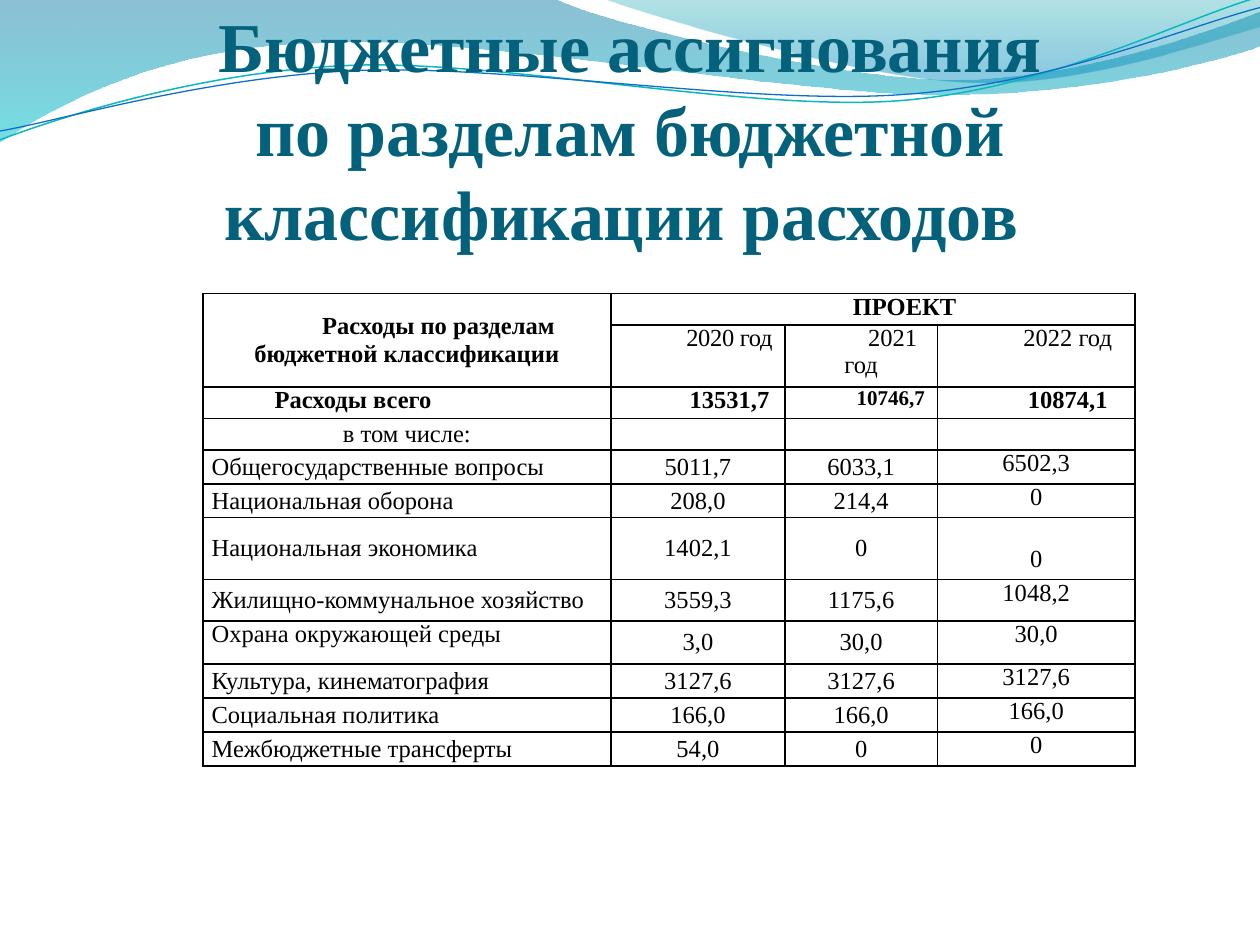
from dataclasses import dataclass
from math import cos, radians, sin
from typing import Optional

from lxml import etree
from pptx import Presentation
from pptx.dml.color import RGBColor
from pptx.enum.text import MSO_ANCHOR, MSO_AUTO_SIZE, PP_ALIGN
from pptx.oxml.ns import qn
from pptx.util import Inches, Pt

LEFT, CENTER = PP_ALIGN.LEFT, PP_ALIGN.CENTER
TOP, MIDDLE, BOTTOM = MSO_ANCHOR.TOP, MSO_ANCHOR.MIDDLE, MSO_ANCHOR.BOTTOM
NO_AUTOFIT = MSO_AUTO_SIZE.NONE


@dataclass(frozen=True)
class Theme:
    font: str = "Times New Roman"
    title_color: str = "04617B"
    ink: str = "000000"
    title_size: float = 40
    table_size: float = 14
    small_size: float = 12
    border_width: float = 1


@dataclass(frozen=True)
class GradientStop:
    color: str
    position: float
    opacity: int


@dataclass(frozen=True)
class Wave:
    bounds: tuple
    start: tuple
    segments: tuple
    stops: tuple = ()
    line_color: str = ""
    line_width: float = 0
    rotation: float = 0


@dataclass(frozen=True)
class CellText:
    text: str
    align: Optional[PP_ALIGN] = CENTER
    anchor: MSO_ANCHOR = TOP
    bold: bool = False
    indent: float = 0
    size: float = Theme.table_size
    spacing: int = 0
    top: float = 0


THEME = Theme()
WAVES = (
    Wave((-0.01, -0.01, 10.02, 1.14), (0, 0),
         ((4.4, -0.01), (4.76, 0.17, 6.64, 0.63, 7.58, 0.63),
          (8.53, 0.63, 9.58, 0.26, 10, 0.09), (10.01, 0.36),
          (9.83, 0.44, 8.7, 0.76, 7.46, 0.75), (6.22, 0.75, 3.82, 0.28, 2.57, 0.34),
          (1.29, 0.36, 0.46, 0.83, -0.01, 1.13), (0, 0)),
         stops=(GradientStop("0074A1", 0, 45), GradientStop("00C6CF", 1, 55))),
    Wave((4.79, -0.01, 5.21, 0.7), (4.79, -0.01),
         ((5.09, 0.11, 6.82, 0.62, 7.69, 0.65), (8.56, 0.69, 9.61, 0.32, 10, 0.21),
          (10, 0), (4.79, -0.01)),
         stops=(GradientStop("00A1A9", 0, 30), GradientStop("008BBF", 0.8, 45))),
    Wave((-0.02, 0.22, 10.02, 0.71), (0, 1.11),
         ((0.48, 0.93, 1.58, 0.57, 2.77, 0.52), (3.95, 0.47, 5.93, 0.89, 7.13, 0.8),
          (8.33, 0.71, 9.38, 0.15, 9.98, -0.02)),
         line_color="0AB8BF", line_width=0.85, rotation=357.3),
    Wave((-0.02, 0.3, 10.03, 0.58), (0, 1.04),
         ((0.47, 0.96, 1.64, 0.61, 2.83, 0.56), (4.03, 0.51, 5.97, 0.84, 7.17, 0.75),
          (8.36, 0.67, 9.41, 0.21, 10, 0.06)),
         line_color="0F6FC6", line_width=0.75, rotation=357.3),
)
COLUMN_WIDTHS = (3.24, 1.38, 1.21, 1.57)
ROW_HEIGHTS = (0.25, 0.49, 0.25, 0.25, 0.27, 0.27, 0.49, 0.33, 0.34, 0.27, 0.27, 0.27)
HEADER = {
    (0, 0): CellText("Расходы по разделам бюджетной классификации", anchor=MIDDLE,
                     bold=True, indent=0.5),
    (0, 1): CellText("ПРОЕКТ", bold=True, indent=0.5),
    (1, 1): CellText("2020 год", indent=0.5, spacing=-20),
    (1, 2): CellText("2021 год", indent=0.5),
    (1, 3): CellText("2022 год", indent=0.5),
    (2, 0): CellText("Расходы всего", align=LEFT, bold=True, indent=0.5),
    (2, 1): CellText("13531,7", bold=True, indent=0.5),
    (2, 2): CellText("10746,7", align=LEFT, bold=True, indent=0.5, size=THEME.small_size),
    (2, 3): CellText("10874,1", bold=True, indent=0.5),
    (3, 0): CellText("в том числе:", anchor=MIDDLE),
}
EXPENSES = (
    ("Общегосударственные вопросы", "5011,7", "6033,1", "6502,3"),
    ("Национальная оборона", "208,0", "214,4", "0"),
    ("Национальная экономика", "1402,1", "0", "0"),
    ("Жилищно-коммунальное хозяйство", "3559,3", "1175,6", "1048,2"),
    ("Охрана окружающей среды", "3,0", "30,0", "30,0"),
    ("Культура, кинематография", "3127,6", "3127,6", "3127,6"),
    ("Социальная политика", "166,0", "166,0", "166,0"),
    ("Межбюджетные трансферты", "54,0", "0", "0"),
)
FIRST_EXPENSE_ROW = 4


def write_text(frame, text: str, *, size: float, color: str, bold: bool = False,
               align: PP_ALIGN = CENTER, indent: float = 0, spacing: int = 0) -> None:
    para = frame.paragraphs[0]
    para.alignment = align
    if indent:
        properties = para._p.get_or_add_pPr()
        properties.set("marL", "0")
        properties.set("indent", str(Inches(indent)))
    if not text:
        etree.SubElement(para._p, qn("a:endParaRPr"), sz=str(int(size * 100)))
        return
    for index, line in enumerate(text.split("\n")):
        if index:
            para.add_line_break()
        span = para.add_run()
        span.text = line
        span.font.name = THEME.font
        span.font.size = Pt(size)
        span.font.bold = bold
        span.font.color.rgb = RGBColor.from_string(color)
        if spacing:
            span.font._element.set("spc", str(spacing))


def local_point(wave: Wave, x: float, y: float) -> tuple:
    left, top, width, height = wave.bounds
    angle = radians(-wave.rotation)
    across, down = x - left - width / 2, y - top - height / 2
    return (Inches(across * cos(angle) - down * sin(angle) + width / 2),
            Inches(across * sin(angle) + down * cos(angle) + height / 2))


def add_outline(shape, wave: Wave) -> None:
    shape.left, shape.top, shape.width, shape.height = map(Inches, wave.bounds)
    shape.rotation = wave.rotation
    outline = shape.element.spPr.find(".//" + qn("a:path"))
    for child in list(outline):
        outline.remove(child)
    outline.set("w", str(shape.width))
    outline.set("h", str(shape.height))
    for index, numbers in enumerate((wave.start, *wave.segments)):
        tag = "moveTo" if not index else "lnTo" if len(numbers) == 2 else "cubicBezTo"
        command = etree.SubElement(outline, qn(f"a:{tag}"))
        for x, y in zip(numbers[::2], numbers[1::2]):
            across, down = local_point(wave, x, y)
            etree.SubElement(command, qn("a:pt"), x=str(across), y=str(down))
    if wave.stops:
        etree.SubElement(outline, qn("a:close"))


def draw_wave(page, wave: Wave) -> None:
    builder = page.shapes.build_freeform(*map(Inches, wave.start))
    builder.add_line_segments([tuple(map(Inches, segment[-2:])) for segment in wave.segments],
                              close=False)
    shape = builder.convert_to_shape()
    add_outline(shape, wave)
    shape.shadow.inherit = False
    if not wave.stops:
        shape.fill.background()
        shape.line.color.rgb = RGBColor.from_string(wave.line_color)
        shape.line.width = Pt(wave.line_width)
        return
    shape.line.fill.background()
    shape.fill.gradient()
    shape.fill.gradient_angle = 270
    for target, stop in zip(shape.fill.gradient_stops, wave.stops):
        target.color.rgb = RGBColor.from_string(stop.color)
        target.position = stop.position
    colors = shape.element.spPr.findall(".//" + qn("a:gs") + "/" + qn("a:srgbClr"))
    for color, stop in zip(colors, wave.stops):
        etree.SubElement(color, qn("a:alpha"), val=str(stop.opacity * 1000))


def fill_cell(cell, content: CellText) -> None:
    cell.fill.background()
    properties = cell._tc.get_or_add_tcPr()
    for index, side in enumerate(("lnL", "lnR", "lnT", "lnB")):
        border = etree.Element(qn(f"a:{side}"), w=str(Pt(THEME.border_width)))
        fill = etree.SubElement(border, qn("a:solidFill"))
        etree.SubElement(fill, qn("a:srgbClr"), val=THEME.ink)
        properties.insert(index, border)
    cell.margin_left = cell.margin_right = Inches(0.07)
    cell.margin_top, cell.margin_bottom = Inches(content.top), 0
    cell.vertical_anchor = content.anchor
    write_text(cell.text_frame, content.text, size=content.size, color=THEME.ink,
               bold=content.bold, align=content.align, indent=content.indent,
               spacing=content.spacing)


def table_contents() -> dict:
    contents = dict(HEADER)
    last = len(COLUMN_WIDTHS) - 1
    for row, values in enumerate(EXPENSES, FIRST_EXPENSE_ROW):
        for column, text in enumerate(values):
            high = column == last or text == "Охрана окружающей среды"
            lowered = column == last and values[0] == "Национальная экономика"
            contents[row, column] = CellText(
                text, align=CENTER if column else LEFT,
                anchor=TOP if high else MIDDLE, top=0.22 if lowered else 0)
    return contents


def draw_table(page) -> None:
    table = page.shapes.add_table(
        len(ROW_HEIGHTS), len(COLUMN_WIDTHS), Inches(1.61), Inches(2.33),
        Inches(sum(COLUMN_WIDTHS)), Inches(sum(ROW_HEIGHTS))).table
    table.first_row = table.horz_banding = False
    for column, width in zip(table.columns, COLUMN_WIDTHS):
        column.width = Inches(width)
    contents = table_contents()
    for row_index, height in enumerate(ROW_HEIGHTS):
        table.rows[row_index].height = Inches(height)
        for column_index in range(len(COLUMN_WIDTHS)):
            fill_cell(table.cell(row_index, column_index),
                      contents.get((row_index, column_index), CellText("")))
    table.cell(0, 0).merge(table.cell(1, 0))
    table.cell(0, 1).merge(table.cell(0, 3))


def draw_title(page) -> None:
    title = page.shapes.title
    title.left, title.top, title.width, title.height = map(Inches, (0.5, 0.77, 9, 1.25))
    frame = title.text_frame
    frame.word_wrap = True
    frame.auto_size = NO_AUTOFIT
    frame.vertical_anchor = BOTTOM
    frame.margin_left = frame.margin_right = frame.margin_bottom = 0
    frame.margin_top = Inches(0.05)
    write_text(frame, "Бюджетные ассигнования\nпо разделам бюджетной классификации расходов ",
               size=THEME.title_size, color=THEME.title_color, bold=True)
    title.element.getparent().append(title.element)


def main() -> None:
    """Build the budget appropriations slide."""
    deck = Presentation()
    deck.slide_width, deck.slide_height = Inches(10), Inches(7.5)
    page = deck.slides.add_slide(deck.slide_layouts[5])
    for wave in WAVES:
        draw_wave(page, wave)
    draw_title(page)
    draw_table(page)
    deck.save("out.pptx")


if __name__ == "__main__":
    main()
